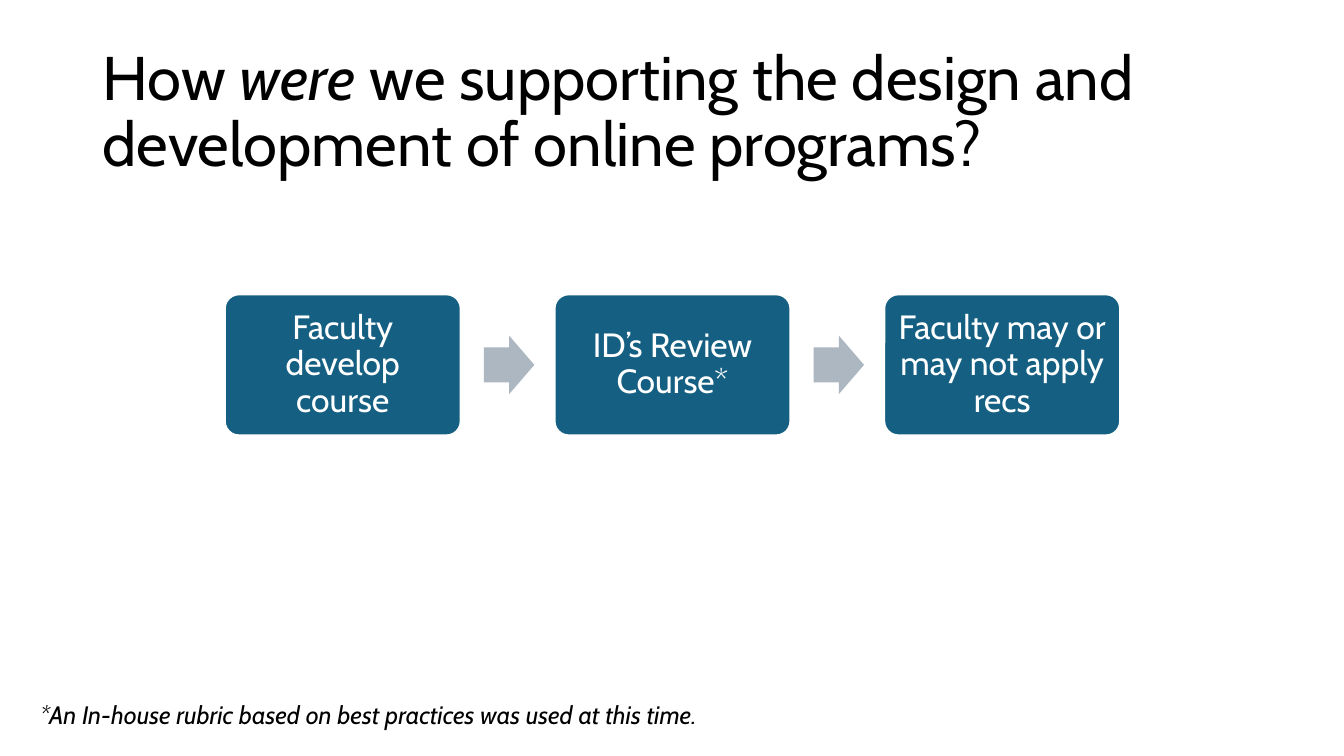
from pptx import Presentation
from pptx.dml.color import RGBColor
from pptx.enum.shapes import MSO_SHAPE
from pptx.enum.text import MSO_ANCHOR, PP_ALIGN
from pptx.util import Inches, Pt

THEME = {
    "font": "Cabin",
    "ink": RGBColor.from_string("000000"),
    "paper": RGBColor.from_string("FFFFFF"),
    "step": RGBColor.from_string("156082"),
    "arrow": RGBColor.from_string("ACB7C1"),
    "title": Pt(44),
    "body": Pt(24),
    "note": Pt(18),
}


def write(box, pieces, size, color, frame_format, para_format):
    """Fill a box with one paragraph of (text, italic) pieces."""
    frame = box.text_frame
    para = frame.paragraphs[0]
    for target, values in ((frame, frame_format), (para, para_format)):
        for name, value in values.items():
            setattr(target, name, value)
    for text, italic in pieces:
        span = para.add_run()
        span.text = text
        span.font.color.rgb = color
        for name, value in {"name": THEME["font"], "size": size, "italic": italic}.items():
            setattr(span.font, name, value)


def add_block(page, kind, place, fill, corners):
    """Add a filled shape without outline or shadow."""
    block = page.shapes.add_shape(kind, *map(Inches, place))
    block.shadow.inherit = False
    block.fill.solid()
    block.fill.fore_color.rgb = fill
    block.line.fill.background()
    for index, value in enumerate(corners):
        block.adjustments[index] = value
    return block


deck = Presentation()
deck.slide_width, deck.slide_height = Inches(13.33), Inches(7.5)
page = deck.slides.add_slide(deck.slide_layouts[6])

# Title
title = page.shapes.add_textbox(*map(Inches, (0.92, 0.4, 11.5, 1.45)))
write(title,
      [("How", False), (" were", True),
       (" we supporting the design and development of online programs?", False)],
      THEME["title"], THEME["ink"],
      {"word_wrap": True, "vertical_anchor": MSO_ANCHOR.MIDDLE},
      {"line_spacing": 0.9})

# Process steps, with an arrow in each gap
steps = ["Faculty develop course", "ID’s Review Course*", "Faculty may or may not apply recs"]
left, top, pitch = 2.23, 2.92, 3.27
step_width, step_height = 2.34, 1.4
arrow_offset, arrow_width, arrow_height = 2.57, 0.5, 0.58
arrow_top = top + (step_height - arrow_height) / 2
inset = Inches(0.1)

for column, label in enumerate(steps):
    x = left + column * pitch
    step = add_block(page, MSO_SHAPE.ROUNDED_RECTANGLE,
                     (x, top, step_width, step_height), THEME["step"], [0.1])
    step.line.color.rgb = THEME["paper"]
    step.line.width = Pt(1.5)
    write(step, [(label, False)], THEME["body"], THEME["paper"],
          {"word_wrap": True, "vertical_anchor": MSO_ANCHOR.MIDDLE,
           "margin_left": inset, "margin_right": inset,
           "margin_top": inset, "margin_bottom": inset},
          {"alignment": PP_ALIGN.CENTER, "line_spacing": 0.9})
    if column < len(steps) - 1:
        add_block(page, MSO_SHAPE.RIGHT_ARROW,
                  (x + arrow_offset, arrow_top, arrow_width, arrow_height),
                  THEME["arrow"], [0.6, 0.5])

# Footnote
note = page.shapes.add_textbox(*map(Inches, (0.3, 6.89, 7.51, 0.4)))
write(note, [("*An In-house rubric based on best practices was used at this time.", True)],
      THEME["note"], THEME["ink"], {"word_wrap": True}, {})

deck.save("out.pptx")
